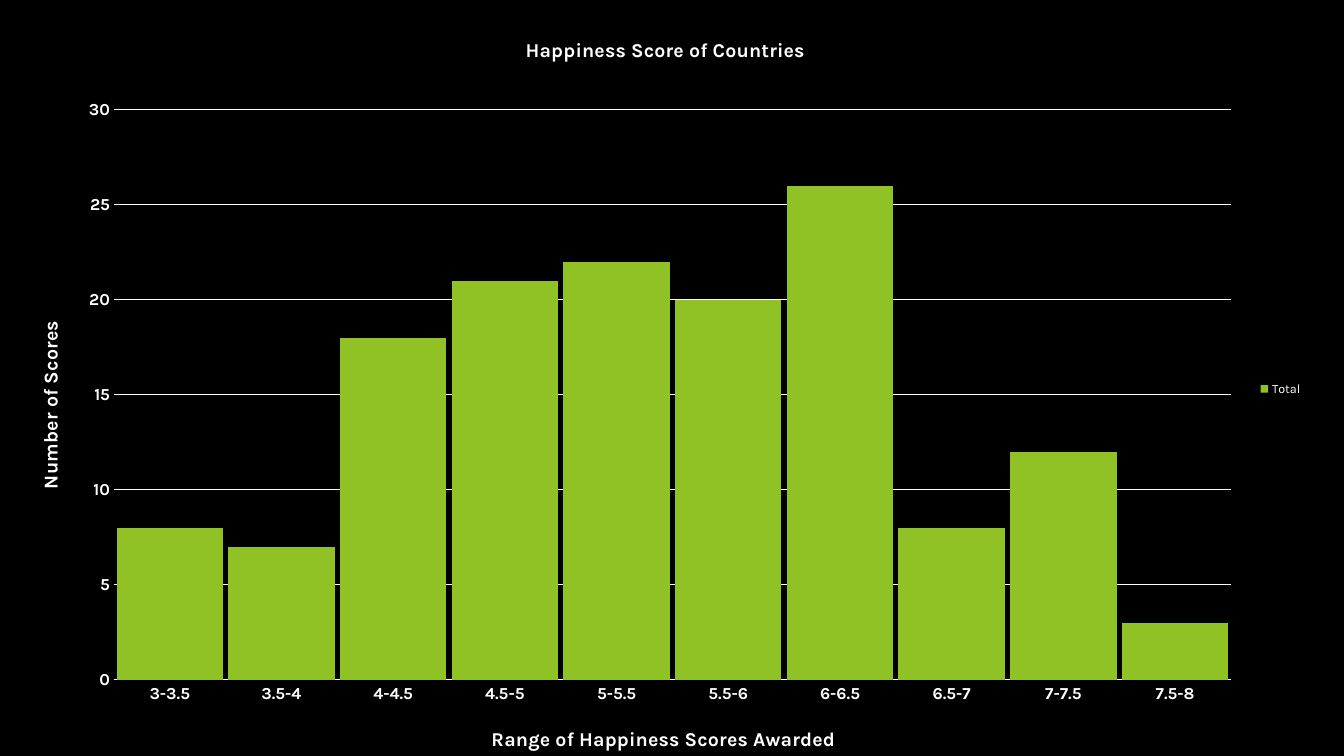
from lxml import etree
from pptx import Presentation
from pptx.chart.data import CategoryChartData
from pptx.dml.color import RGBColor
from pptx.enum.chart import XL_CHART_TYPE as CT, XL_LEGEND_POSITION as LP, XL_TICK_MARK as TM
from pptx.enum.shapes import MSO_SHAPE as SHAPE
from pptx.oxml import parse_xml
from pptx.oxml.ns import nsdecls, qn
from pptx.util import Emu, Pt

# Content: lengths in px
SLIDE = (1344, 756)
BACKDROP = (-109, -21, 1526, 862)
CHART = (10, 9, 1303, 760)
PLOT = (114, 110, 1117, 570)
TITLE = ("Happiness Score of Countries", (522, 34))
X_TITLE = ("Range of Happiness Scores Awarded", (488, 723))
Y_TITLE = ("Number of Scores", (34, 317))
SERIES = "Total"
SCORES = {
    "3-3.5": 8, "3.5-4": 7, "4-4.5": 18, "4.5-5": 21, "5-5.5": 22,
    "5.5-6": 20, "6-6.5": 26, "6.5-7": 8, "7-7.5": 12, "7.5-8": 3,
}
FONT = "Karla"
WHITE, BLACK, GREEN, OLIVE, SLATE = "FFFFFF", "000000", "90C226", "6B901C", "2C3C43"


def px(n):
    return Emu(round(n * 914400 / 100.8))


def rgb(color):
    return RGBColor.from_string(color)


def style(font, size, bold=False):
    font.name, font.size, font.bold = FONT, Pt(size), bold
    font.color.rgb = rgb(WHITE)


def paint(fill, color):
    fill.solid()
    fill.fore_color.rgb = rgb(color)


def rule(line, color, width):
    line.color.rgb = rgb(color)
    line.width = Pt(width)


def layout(box, inner=False):
    """Manual layout in fractions of the chart frame."""
    left, top, width, height = CHART
    parts = [("xMode", "edge"), ("yMode", "edge"),
             ("x", (box[0] - left) / width), ("y", (box[1] - top) / height)]
    if inner:
        parts = [("layoutTarget", "inner")] + parts
        parts += [("w", box[2] / width), ("h", box[3] / height)]
    el = parse_xml(f"<c:layout {nsdecls('c')}><c:manualLayout/></c:layout>")
    for name, val in parts:
        text = val if isinstance(val, str) else f"{val:.4f}"
        etree.SubElement(el[0], qn("c:" + name)).set("val", text)
    return el


def add_title(owner, content):
    text, corner = content
    owner.has_title = True
    title = owner.chart_title if hasattr(owner, "chart_title") else owner.axis_title
    r = title.text_frame.paragraphs[0].add_run()
    r.text = text
    style(r.font, 14, True)
    el = title.text_frame._txBody.getparent().getparent()
    for old in el.findall(qn("c:layout")):
        el.remove(old)
    el.find(qn("c:tx")).addnext(layout(corner))
    return title


prs = Presentation()
prs.slide_width, prs.slide_height = map(px, SLIDE)
s = prs.slides.add_slide(prs.slide_layouts[6])
paint(s.background.fill, SLATE)

# Backdrop
sp = s.shapes.add_shape(SHAPE.ROUNDED_RECTANGLE, *map(px, BACKDROP))
sp.shadow.inherit = False
paint(sp.fill, BLACK)
rule(sp.line, OLIVE, 1.5)

# Histogram
data = CategoryChartData()
data.categories = list(SCORES)
data.add_series(SERIES, list(SCORES.values()))
chart = s.shapes.add_chart(CT.COLUMN_CLUSTERED, *map(px, CHART), data).chart
style(chart.font, 10)
plot = chart.plots[0]
plot.gap_width, plot.overlap, plot.vary_by_categories = 5, -27, False
paint(plot.series[0].format.fill, GREEN)
area = chart._chartSpace.chart.plotArea
for old in area.findall(qn("c:layout")):
    area.remove(old)
area.insert(0, layout(PLOT, inner=True))

# Axes
x_axis, y_axis = chart.category_axis, chart.value_axis
for axis, title in ((x_axis, X_TITLE), (y_axis, Y_TITLE)):
    axis.major_tick_mark = axis.minor_tick_mark = TM.NONE
    style(axis.tick_labels.font, 12, True)
    add_title(axis, title)
x_axis.has_major_gridlines = False
rule(x_axis.format.line, WHITE, 0.75)
y_axis.minimum_scale, y_axis.maximum_scale, y_axis.major_unit = 0, 30, 5
y_axis.format.line.fill.background()
y_axis.has_major_gridlines = True
rule(y_axis.major_gridlines.format.line, WHITE, 0.75)
turn = y_axis.axis_title.text_frame._txBody.bodyPr
turn.set("rot", "-5400000")
turn.set("vert", "horz")

# Chart title and legend
add_title(chart, TITLE)
chart.has_legend = True
chart.legend.position = LP.RIGHT
chart.legend.include_in_layout = False
style(chart.legend.font, 9)

prs.save("out.pptx")
